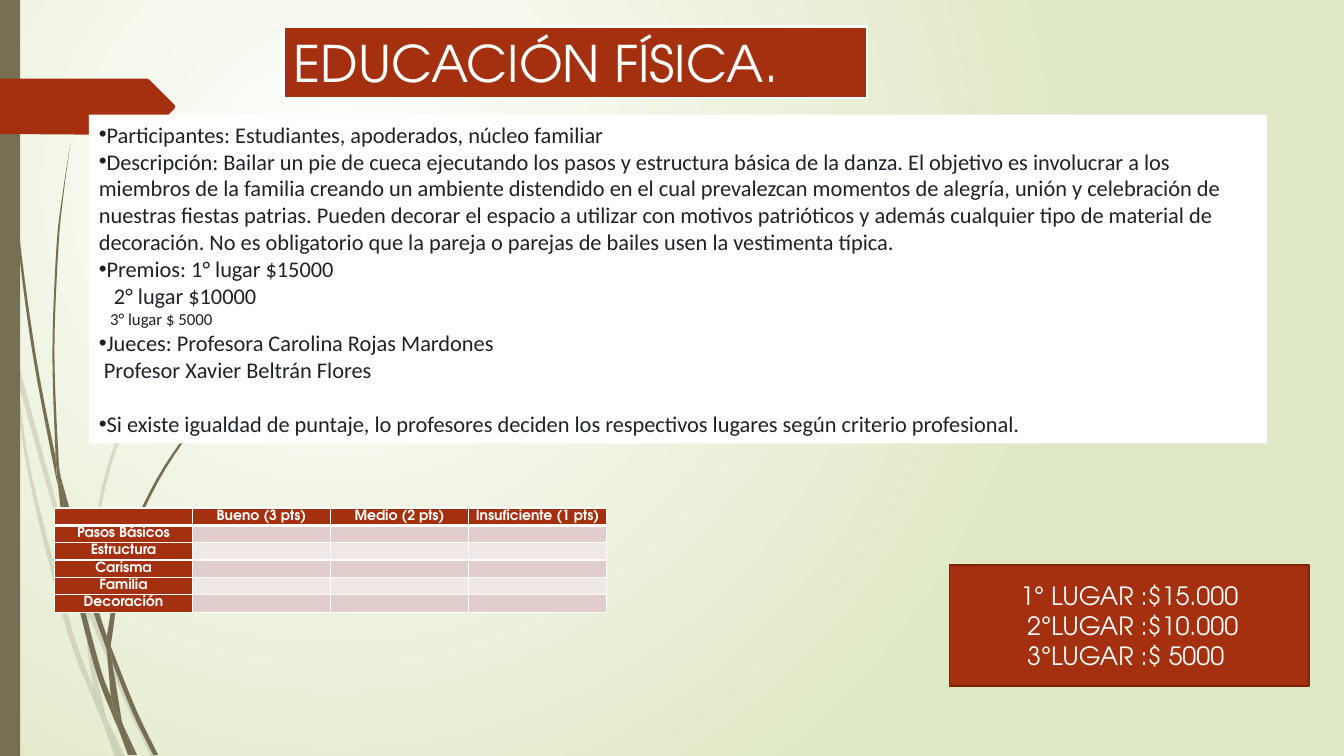
"""Build the slide for the dance contest in physical education."""
from dataclasses import dataclass
from typing import Any

from pptx import Presentation
from pptx.dml.color import RGBColor
from pptx.enum.shapes import MSO_SHAPE as Preset
from pptx.enum.text import MSO_ANCHOR as Anchor, MSO_AUTO_SIZE as AutoSize, PP_ALIGN as Align
from pptx.oxml.ns import qn
from pptx.oxml.xmlchemy import OxmlElement
from pptx.util import Pt

COLOURS = {
    "rust": "A53010", "dark rust": "7A240C", "olive": "766F54", "white": "FFFFFF",
    "lime": "DFE8C4", "ink": "1D2228", "odd row": "E1CDCC", "even row": "F0E8E7",
}
DISPLAY, BODY = "TeX Gyre Adventor", "Calibri"
Edge = list[tuple[float, float]]


@dataclass(frozen=True)
class Blade:
    """A grass blade between two edges, in hundredths of an inch."""
    out: Edge
    back: Edge
    opacity: int = 100


@dataclass(frozen=True)
class Line:
    """A paragraph of text; lengths in points."""
    text: str
    size: float = 16
    bullet: bool = False
    left: float = 0
    right: float = 0
    before: float = 0


FAINT = [
    ([(0, 282), (9, 322), (11, 350)], [(10, 344), (0, 299)]),
    ([(14, 345), (62, 520), (85, 586)], [(84, 599), (58, 522), (17, 376)]),
    ([(88, 596), (92, 607), (127, 692), (155, 751)], [(150, 751), (123, 694), (88, 610)]),
    ([(105, 711), (124, 751)], [(119, 751)]),
    ([(11, 350), (17, 376), (31, 469), (70, 619), (93, 683)],
     [(101, 714), (92, 693), (65, 621), (28, 470), (11, 350)]),
    ([(84, 599), (88, 608), (91, 646), (105, 711)], [(96, 692), (93, 683), (87, 646)]),
    ([(85, 586), (85, 584), (107, 461), (158, 348), (228, 244), (268, 197), (312, 153)],
     [(312, 154), (268, 198), (229, 245), (160, 349), (110, 462), (88, 584), (88, 596)]),
    ([(101, 714), (119, 751)], [(114, 751)]),
    ([(84, 599), (85, 586)], [(88, 596), (88, 610)]),
    ([(93, 683), (96, 692), (105, 711), (119, 751)], [(101, 714), (99, 707)]),
]
SOLID = [
    ([(3, 0), (4, 48), (7, 110), (17, 233), (33, 355), (57, 481)],
     [(55, 453), (36, 355), (19, 232), (8, 109), (5, 48), (4, 0)]),
    ([(60, 472), (93, 590), (106, 631)], [(106, 645), (88, 592), (64, 505)]),
    ([(110, 641), (113, 649), (136, 706), (157, 749)], [(152, 749), (132, 708), (111, 656)]),
    ([(57, 477), (64, 505), (72, 556), (98, 657), (110, 691)],
     [(117, 722), (111, 708), (93, 659), (68, 557), (57, 477)]),
    ([(60, 472), (58, 453), (54, 349), (58, 245), (63, 193), (70, 141)],
     [(70, 141), (62, 193), (56, 245), (52, 349), (55, 449)]),
    ([(122, 719), (136, 749)], [(133, 749)]),
    ([(55, 449), (60, 472), (64, 505)], [(57, 477), (55, 453)]),
    ([(106, 631), (122, 551), (156, 474), (204, 405), (231, 373), (260, 344)],
     [(261, 344), (231, 374), (205, 406), (158, 476), (125, 552), (111, 633), (110, 641)]),
    ([(117, 722), (131, 749)], [(127, 749)]),
    ([(106, 645), (111, 656), (121, 716), (122, 719)], [(116, 706), (110, 691)]),
    ([(106, 631), (110, 641), (111, 656)], [(109, 651), (106, 645)]),
    ([(110, 691), (116, 706), (122, 719), (133, 749)], [(130, 749), (117, 722)]),
]
BLADES = [Blade(*edges, 20) for edges in FAINT] + [Blade(*edges) for edges in SOLID]
RIBBON = [(0, 78), (146, 78), (148, 79), (173, 104), (174, 106), (173, 108),
          (148, 133), (146, 134), (0, 133)]
DETAILS = [
    Line("Participantes: Estudiantes, apoderados, núcleo familiar", bullet=True),
    Line("Descripción: Bailar un pie de cueca ejecutando los pasos y estructura básica de la danza. "
         "El objetivo es involucrar a los miembros de la familia creando un ambiente distendido en el "
         "cual prevalezcan momentos de alegría, unión y celebración de nuestras fiestas patrias. "
         "Pueden decorar el espacio a utilizar con motivos patrióticos y además cualquier tipo de "
         "material de decoración. No es obligatorio que la pareja o parejas de bailes usen la "
         "vestimenta típica.", bullet=True),
    Line("Premios: 1° lugar $15000", bullet=True),
    Line("2° lugar $10000", left=10.8),
    Line("3° lugar $ 5000", size=12, left=8.1),
    Line("Jueces: Profesora Carolina Rojas Mardones", bullet=True),
    Line("Profesor Xavier Beltrán Flores", left=3.6),
    Line("Si existe igualdad de puntaje, lo profesores deciden los respectivos lugares según "
         "criterio profesional.", bullet=True, before=19.5),
]
PRIZES = [Line("1° LUGAR :$15.000", 18), Line("2°LUGAR :$10.000", 18, left=5),
          Line("3°LUGAR :$ 5000", 18, right=5)]
LEVELS = ["", "Bueno (3 pts)", "Medio (2 pts)", "Insuficiente (1 pts)"]
CRITERIA = ["Pasos Básicos", "Estructura", "Carisma", "Familia", "Decoración"]


def colour(name: str) -> RGBColor:
    """Return a named colour."""
    return RGBColor.from_string(COLOURS[name])


def assign(target: Any, formats: dict[str, Any]) -> None:
    """Set each format value on the target."""
    for name, value in formats.items():
        setattr(target, name, value)


def place(shape: Any, left: float, top: float, width: float, height: float) -> None:
    """Position a shape in points."""
    assign(shape, {"left": Pt(left), "top": Pt(top), "width": Pt(width), "height": Pt(height)})


def paint(shape: Any, fill: str, line: str = "", weight: float = 1) -> None:
    """Give a shape a flat fill and an optional outline."""
    shape.fill.solid()
    shape.fill.fore_color.rgb = colour(fill)
    if line:
        shape.line.color.rgb = colour(line)
        shape.line.width = Pt(weight)
    else:
        shape.line.fill.background()


def write(frame: Any, lines: list[Line], font: str, ink: str, align: Any) -> None:
    """Write formatted paragraphs into a text frame."""
    assign(frame, {"word_wrap": True, "auto_size": AutoSize.NONE, "vertical_anchor": Anchor.MIDDLE})
    for index, line in enumerate(lines):
        paragraph = frame.paragraphs[0] if index == 0 else frame.add_paragraph()
        assign(paragraph, {"alignment": align, "space_before": Pt(line.before), "space_after": Pt(0)})
        run = paragraph.add_run()
        run.text = line.text
        assign(run.font, {"name": font, "size": Pt(line.size)})
        run.font.color.rgb = colour(ink)
        properties = paragraph._p.get_or_add_pPr()
        for name, value in {"marL": line.left, "marR": line.right, "indent": 0}.items():
            properties.set(name, str(Pt(value)))
        bullet = OxmlElement("a:buChar" if line.bullet else "a:buNone")
        if line.bullet:
            bullet.set("char", "•")
        properties.append(bullet)


def smooth(edge: Edge, steps: int = 6) -> Edge:
    """Run a Catmull-Rom curve through the points of an edge."""
    padded = [edge[0], *edge, edge[-1]]
    curve = [edge[0]]
    for a, b, c, d in zip(padded, padded[1:], padded[2:], padded[3:]):
        for t in (step / steps for step in range(1, steps + 1)):
            curve.append(tuple(
                q + t / 2 * (r - p + t * (2 * p - 5 * q + 4 * r - s + t * (3 * (q - r) + s - p)))
                for p, q, r, s in zip(a, b, c, d)))
    return curve


def draw_outline(slide: Any, points: Edge, fill: str, opacity: int = 100) -> None:
    """Draw a closed outline given in hundredths of an inch."""
    corners = [(Pt(0.72 * x), Pt(0.72 * y)) for x, y in points]
    builder = slide.shapes.build_freeform(*corners[0])
    builder.add_line_segments(corners[1:], close=True)
    shape = builder.convert_to_shape()
    shape.shadow.inherit = False
    paint(shape, fill)
    if opacity < 100:
        alpha = OxmlElement("a:alpha")
        alpha.set("val", str(opacity * 1000))
        next(shape._element.spPr.iter(qn("a:srgbClr"))).append(alpha)


def draw_box(slide: Any, bounds: tuple, fill: str, line: str = "", weight: float = 1) -> Any:
    """Draw a rectangle."""
    shape = slide.shapes.add_shape(Preset.RECTANGLE, *(Pt(value) for value in bounds))
    shape.shadow.inherit = False
    paint(shape, fill, line, weight)
    return shape


def draw_background(slide: Any) -> None:
    """Fill the slide with a radial gradient."""
    fill = slide.background.fill
    fill.gradient()
    for stop, name in zip(fill.gradient_stops, ("white", "lime")):
        stop.color.rgb = colour(name)
    gradient = next(slide._element.iter(qn("a:gradFill")))
    gradient.remove(gradient.find(qn("a:lin")))
    radial, focus = OxmlElement("a:path"), OxmlElement("a:fillToRect")
    radial.set("path", "circle")
    for side, value in zip("ltrb", (50, 50, 100, 100)):
        focus.set(side, str(value * 1000))
    radial.append(focus)
    gradient.append(radial)


def draw_cell(cell: Any, row: int, column: int, text: str) -> None:
    """Fill, border and label one cell of the rubric."""
    heading = row == 0 or column == 0
    cell.fill.solid()
    cell.fill.fore_color.rgb = colour("rust" if heading else "odd row" if row % 2 else "even row")
    assign(cell, {"margin_left": Pt(5), "margin_right": Pt(5), "margin_top": 0, "margin_bottom": 0})
    paragraph = cell.text_frame.paragraphs[0]
    assign(paragraph, {"alignment": Align.CENTER, "line_spacing": 1.15})
    paragraph._p.get_or_add_endParaRPr().set("sz", "1000")
    if text:
        run = paragraph.add_run()
        run.text = text
        assign(run.font, {"name": DISPLAY, "size": Pt(10), "bold": True})
        run.font.color.rgb = colour("white")
    for index, side in enumerate("LRB" if row == 1 else "LRTB"):
        border, solid, tint = (OxmlElement(f"a:{tag}") for tag in ("ln" + side, "solidFill", "srgbClr"))
        border.set("w", str(Pt(3 if row == 0 and side == "B" else 1)))
        tint.set("val", COLOURS["white"])
        solid.append(tint)
        border.append(solid)
        cell._tc.get_or_add_tcPr().insert(index, border)


def draw_rubric(slide: Any) -> None:
    """Draw the scoring table."""
    rows = [LEVELS] + [[name, "", "", ""] for name in CRITERIA]
    table = slide.shapes.add_table(6, 4, Pt(38.9), Pt(362.9), Pt(394.4), Pt(74.4)).table
    for column in table.columns:
        column.width = Pt(98.6)
    for index, texts in enumerate(rows):
        table.rows[index].height = Pt(12.4)
        for column, text in enumerate(texts):
            draw_cell(table.cell(index, column), index, column, text)


def main() -> None:
    """Build and save the presentation."""
    presentation = Presentation()
    assign(presentation, {"slide_width": Pt(960), "slide_height": Pt(540)})
    slide = presentation.slides.add_slide(presentation.slide_layouts[1])
    title, details = slide.placeholders
    draw_background(slide)
    for blade in BLADES:
        draw_outline(slide, smooth(blade.out) + smooth(blade.back), "olive", blade.opacity)
    draw_box(slide, (0, 0, 14.4, 540), "olive")
    draw_outline(slide, RIBBON, "rust")
    slide.shapes._spTree.append(title._element)
    place(title, 202.6, 18.9, 416.6, 51)
    paint(title, "rust", "white", 1.75)
    write(title.text_frame, [Line("EDUCACIÓN FÍSICA.", 36)], DISPLAY, "white", Align.LEFT)
    draw_rubric(slide)
    slide.shapes._spTree.append(details._element)
    place(details, 63.4, 81.8, 841.7, 234.9)
    paint(details, "white")
    write(details.text_frame, DETAILS, BODY, "ink", Align.LEFT)
    prizes = draw_box(slide, (678.2, 403.6, 257, 86.6), "rust", "dark rust", 1.25)
    write(prizes.text_frame, PRIZES, DISPLAY, "white", Align.CENTER)
    presentation.save("out.pptx")


if __name__ == "__main__":
    main()
